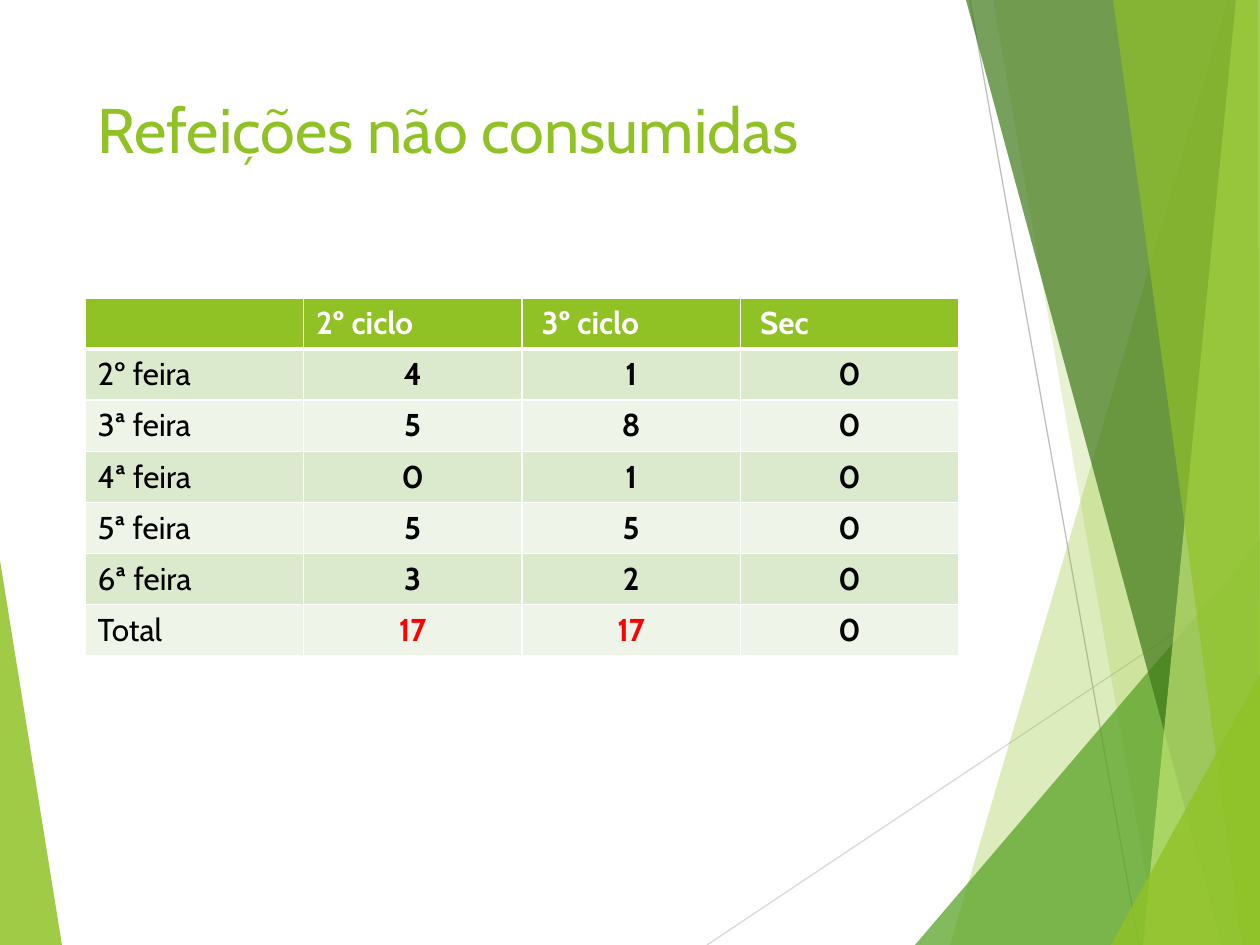
from lxml.etree import SubElement
from pptx import Presentation
from pptx.dml.color import RGBColor
from pptx.enum.shapes import MSO_CONNECTOR
from pptx.enum.text import MSO_ANCHOR, MSO_AUTO_SIZE, PP_ALIGN
from pptx.oxml.ns import qn
from pptx.util import Pt

EMU_PER_PX = 914400 / 126
WIDTH, HEIGHT = 1260, 945
FONT = "Cabin"
COLORS = {
    "lime": "90C226", "green": "54A021", "forest": "3F7819", "pale": "C0E474",
    "grey": "BFBFBF", "light_grey": "D9D9D9", "white": "FFFFFF", "black": "000000",
    "red": "FF0000", "odd_row": "DBE9CD", "even_row": "EEF4E8",
}

# Colour, opacity in percent, corner points in px
LEFT_FACET = ("lime", 85, [(0, 560), (62, HEIGHT), (0, HEIGHT)])
RIGHT_FACETS = [
    ("lime", 30, [(1228, 0), (950, HEIGHT), (WIDTH, HEIGHT), (WIDTH, 0)]),
    ("lime", 20, [(993, 0), (1158, HEIGHT), (WIDTH, HEIGHT), (WIDTH, 0)]),
    ("green", 72, [(915, HEIGHT), (WIDTH, 541), (WIDTH, HEIGHT)]),
    ("forest", 70, [(966, 0), (1222, HEIGHT), (WIDTH, HEIGHT), (WIDTH, 0)]),
    ("pale", 70, [(1236, 0), (1143, HEIGHT), (WIDTH, HEIGHT), (WIDTH, 0)]),
    ("lime", 65, [(1113, 0), (1242, HEIGHT), (WIDTH, HEIGHT), (1258, 0)]),
    ("lime", 80, [(1111, HEIGHT), (WIDTH, 674), (WIDTH, HEIGHT)]),
]
RAYS = [
    ("light_grey", (707, HEIGHT), (WIDTH, 576)),
    ("grey", (970, 0), (1139, HEIGHT)),
]

MEALS = [
    ["", "2º ciclo", " 3º ciclo", " Sec"],
    ["2º feira", "4", "1", "0"],
    ["3ª feira", "5", "8", "0"],
    ["4ª feira", "0", "1", "0"],
    ["5ª feira", "5", "5", "0"],
    ["6ª feira", "3", "2", "0"],
    ["Total", "17", "17", "0"],
]


def px(length):
    return round(length * EMU_PER_PX)


def rgb(name):
    return RGBColor.from_string(COLORS[name])


def format_text(paragraph, size, color, bold=False, align=PP_ALIGN.LEFT):
    paragraph.alignment = align
    for run in paragraph.runs:
        run.font.name = FONT
        run.font.size = Pt(size)
        run.font.bold = bold
        run.font.color.rgb = rgb(color)


def add_facet(slide, color, opacity, points):
    builder = slide.shapes.build_freeform(*points[0], scale=EMU_PER_PX)
    builder.add_line_segments(points[1:], close=True)
    shape = builder.convert_to_shape()
    shape.shadow.inherit = False
    shape.fill.solid()
    shape.fill.fore_color.rgb = rgb(color)
    shape.line.fill.background()
    fill_color = shape.fill._xPr.find(qn("a:solidFill"))[0]
    SubElement(fill_color, qn("a:alpha"), val=str(opacity * 1000))


def add_ray(slide, color, start, end):
    connector = slide.shapes.add_connector(
        MSO_CONNECTOR.STRAIGHT, *map(px, start + end))
    connector.line.color.rgb = rgb(color)
    connector.line.width = Pt(0.75)
    SubElement(connector._element.spPr, qn("a:effectLst"))


def set_title(slide, text):
    title = slide.shapes.title
    title.left, title.top, title.width, title.height = map(px, (85, 84, 874, 121))
    text_frame = title.text_frame
    text_frame.text = text
    text_frame.word_wrap = True
    text_frame.auto_size = MSO_AUTO_SIZE.NONE
    text_frame.vertical_anchor = MSO_ANCHOR.TOP
    format_text(text_frame.paragraphs[0], 36, "lime")


def set_borders(cell, bottom_width):
    """Draw white cell borders; they must precede the fill in the cell properties."""
    properties = cell._tc.get_or_add_tcPr()
    widths = {"a:lnL": 1, "a:lnR": 1, "a:lnT": 1, "a:lnB": bottom_width}
    for index, (side, width) in enumerate(widths.items()):
        line = SubElement(properties, qn(side), w=str(Pt(width)))
        fill = SubElement(line, qn("a:solidFill"))
        SubElement(fill, qn("a:srgbClr"), val=COLORS["white"])
        properties.insert(index, line)


def format_cell(cell, row, column):
    is_header, is_label = row == 0, column == 0
    if is_header:
        fill, color = "lime", "white"
    else:
        fill = "odd_row" if row % 2 else "even_row"
        is_sum = row == len(MEALS) - 1 and column in (1, 2)
        color = "red" if is_sum else "black"
    cell.fill.solid()
    cell.fill.fore_color.rgb = rgb(fill)
    set_borders(cell, bottom_width=3 if is_header else 1)
    align = PP_ALIGN.LEFT if is_header or is_label else PP_ALIGN.CENTER
    format_text(cell.text_frame.paragraphs[0], 18, color,
                bold=is_header or not is_label, align=align)


def add_meal_table(slide):
    row_count, column_count = len(MEALS), len(MEALS[0])
    frame = slide.shapes.add_table(
        row_count, column_count, px(85), px(298), px(874), px(51 * row_count))
    for row, values in enumerate(MEALS):
        for column, value in enumerate(values):
            cell = frame.table.cell(row, column)
            cell.text = value
            format_cell(cell, row, column)


def main():
    presentation = Presentation()
    presentation.slide_width, presentation.slide_height = px(WIDTH), px(HEIGHT)
    slide = presentation.slides.add_slide(presentation.slide_layouts[5])
    add_facet(slide, *LEFT_FACET)
    for ray in RAYS:
        add_ray(slide, *ray)
    for facet in RIGHT_FACETS:
        add_facet(slide, *facet)
    set_title(slide, "Refeições não consumidas")
    add_meal_table(slide)
    presentation.save("out.pptx")


if __name__ == "__main__":
    main()
